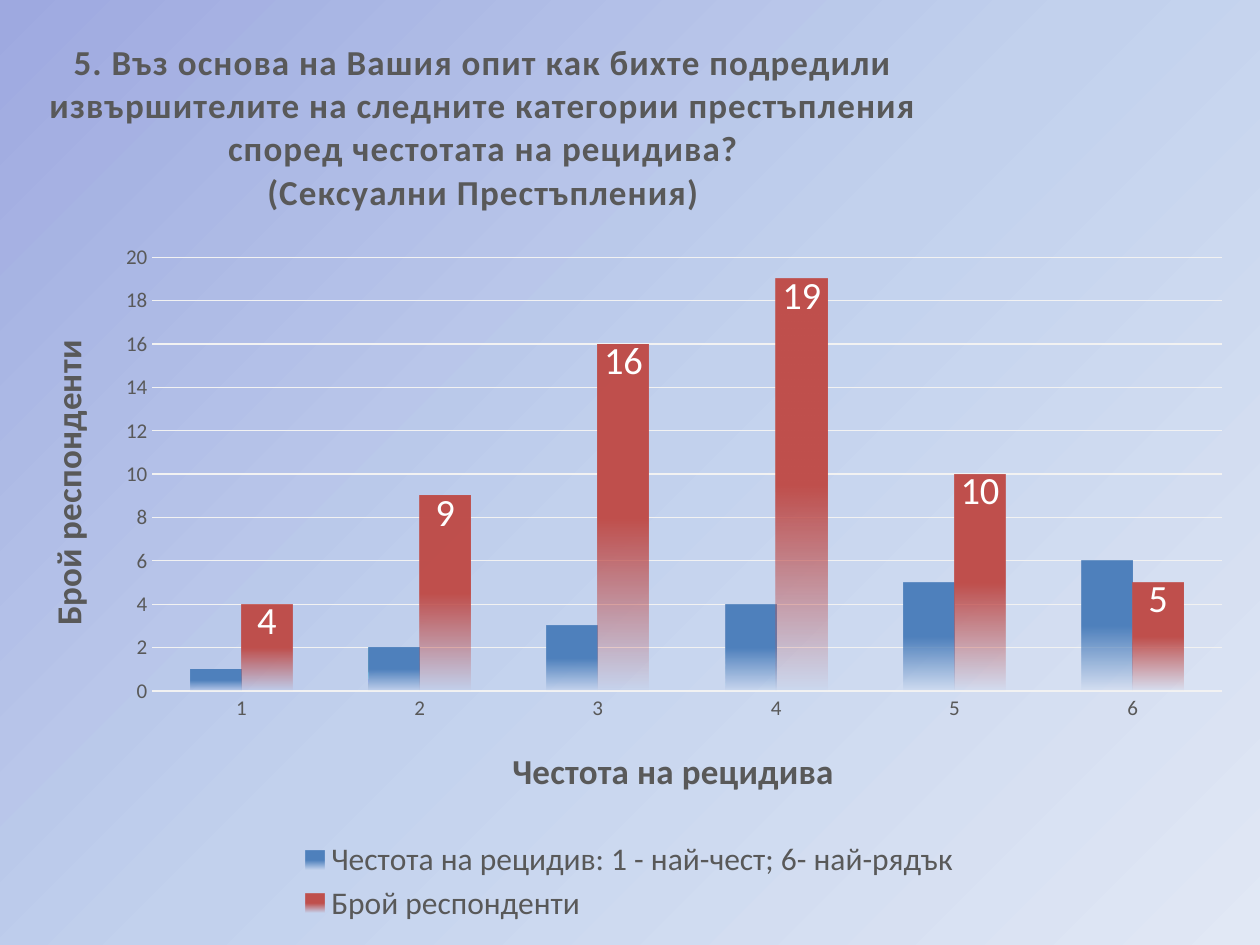
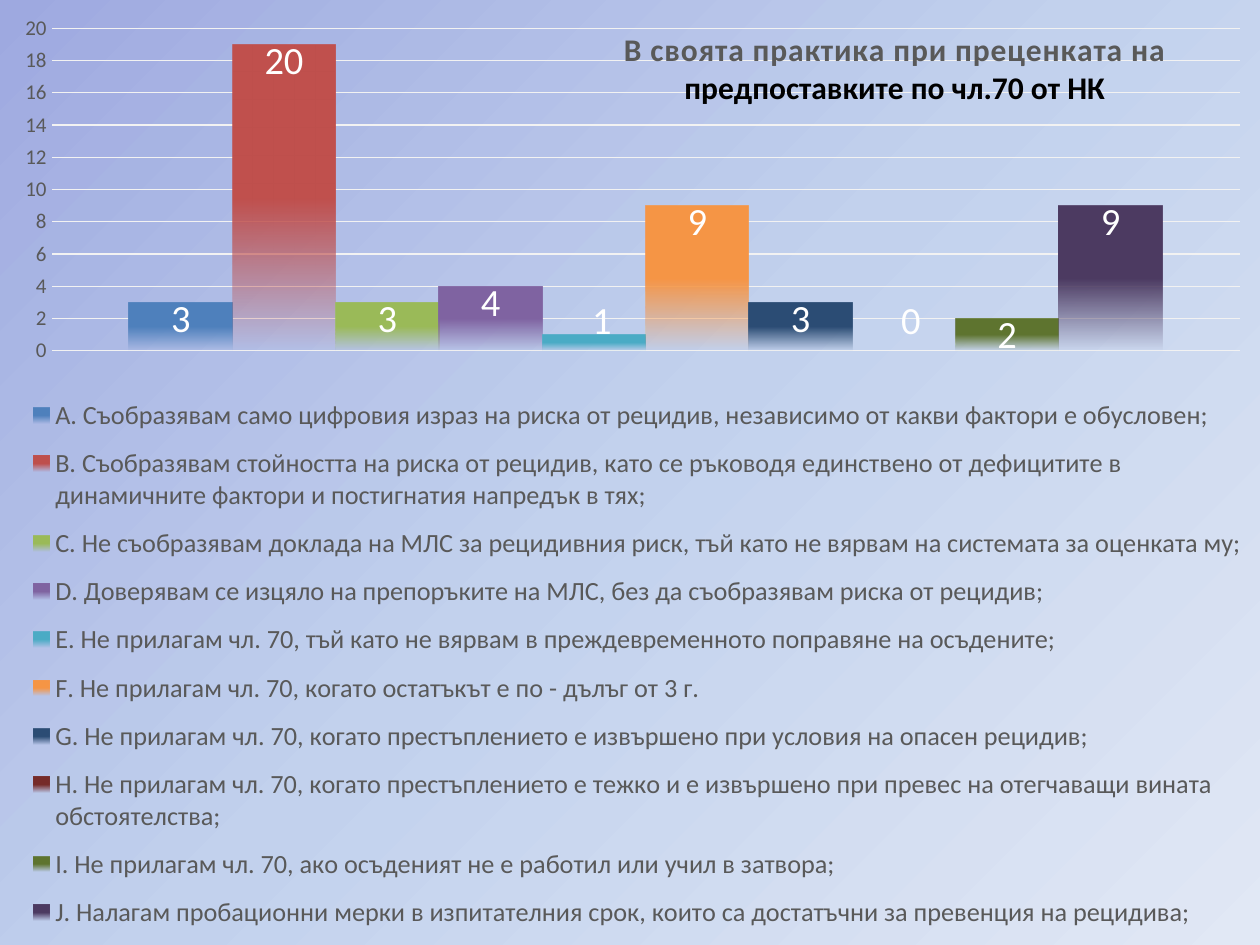
from lxml import etree
from pptx import Presentation
from pptx.chart.data import CategoryChartData
from pptx.dml.color import RGBColor
from pptx.enum import chart as kinds
from pptx.oxml.ns import nsdecls, qn
from pptx import util as u

COLORS = {
    "sky_dark": "9EA9E0", "sky": "C2D1ED", "sky_light": "E1E8F5",
    "grid": "F2F2F2", "grey": "595959", "white": "FFFFFF", "black": "000000",
    "blue": "4F81BD", "red": "C0504D", "green": "9BBB59", "purple": "8064A2",
    "aqua": "4BACC6", "orange": "F79646", "navy": "2C4D75", "maroon": "772C2A",
    "olive": "5F7530", "plum": "4D3B62",
}
FONT = "Calibri"
LABEL_SHIFT = (0, -0.23)

# Series: name, values, colour
RECIDIVISM = [
    ("Честота на рецидив: 1 - най-чест; 6- най-рядък", [1, 2, 3, 4, 5, 6], "blue"),
    ("Брой респонденти", [4, 9, 16, 19, 10, 5], "red"),
]
PRACTICE = [
    ("А. Съобразявам само цифровия израз на риска от рецидив, независимо от "
     "какви фактори е обусловен;", [3], "blue"),
    ("В. Съобразявам стойността на риска от рецидив, като се ръководя единствено "
     "от дефицитите в динамичните фактори и постигнатия напредък в тях;", [19], "red"),
    ("С. Не съобразявам доклада на МЛС за рецидивния риск, тъй като не вярвам "
     "на системата за оценката му;", [3], "green"),
    ("D. Доверявам се изцяло на препоръките на МЛС, без да съобразявам риска "
     "от рецидив;", [4], "purple"),
    ("Е. Не прилагам чл. 70, тъй като не вярвам в преждевременното поправяне "
     "на осъдените;", [1], "aqua"),
    ("F. Не прилагам чл. 70, когато остатъкът е по - дълъг от 3 г.", [9], "orange"),
    ("G. Не прилагам чл. 70, когато престъплението е извършено при условия "
     "на опасен рецидив;", [3], "navy"),
    ("H. Не прилагам чл. 70, когато престъплението е тежко и е извършено при "
     "превес на отегчаващи вината обстоятелства;", [0], "maroon"),
    ("I. Не прилагам чл. 70, ако осъденият не е работил или учил в затвора;",
     [2], "olive"),
    ("J. Налагам пробационни мерки в изпитателния срок, които са достатъчни "
     "за превенция на рецидива;", [9], "plum"),
]


def apply(target, values):
    for name, value in values.items():
        setattr(target, name, value)


def set_font(font, size, color="grey", bold=False):
    apply(font, {"name": FONT, "size": u.Pt(size), "bold": bold})
    font.color.rgb = RGBColor.from_string(COLORS[color])


def set_gradient(properties, stops, angle):
    """Swap the solid fill for a gradient; stops are (percent, colour, alpha)."""
    gradient = etree.fromstring(
        f'<a:gradFill {nsdecls("a")} rotWithShape="1"><a:gsLst/>'
        f'<a:lin ang="{angle * 60000}" scaled="0"/></a:gradFill>')
    for percent, color, alpha in stops:
        stop = etree.SubElement(gradient[0], qn("a:gs"), pos=str(percent * 1000))
        value = etree.SubElement(stop, qn("a:srgbClr"), val=COLORS[color])
        if alpha < 100:
            etree.SubElement(value, qn("a:alpha"), val=str(alpha * 1000))
    properties.replace(properties.find(qn("a:solidFill")), gradient)


def set_layout(element, box, place, inner=False, shift=False):
    """Place a chart part at (x, y[, w, h]) cm in the chart, or shift it by (x, y)."""
    for old in element.findall(qn("c:layout")):
        element.remove(old)
    layout = etree.Element(qn("c:layout"))
    manual = etree.SubElement(layout, qn("c:manualLayout"))
    entries = [("layoutTarget", "inner")] if inner else []
    if not shift:
        entries += [("xMode", "edge"), ("yMode", "edge")]
    sizes = (box[2], box[3]) * 2
    entries += [(tag, length / size) for tag, length, size in zip("xywh", place, sizes)]
    for tag, value in entries:
        etree.SubElement(manual, qn(f"c:{tag}"), val=str(value))
    # A label keeps its layout before its text, other parts after it
    first = (qn("c:idx"),) if shift else (qn("c:tx"), qn("c:legendPos"))
    element.insert(sum(child.tag in first for child in element), layout)


def write_title(title, lines, size, box, place):
    """Lines are (text, colour, letter spacing in hundredths of a point)."""
    frame = title.text_frame
    for number, (line, color, spacing) in enumerate(lines):
        paragraph = frame.add_paragraph() if number else frame.paragraphs[0]
        run = paragraph.add_run()
        run.text = line
        set_font(run.font, size, color, bold=True)
        run._r.get_or_add_rPr().set("spc", str(spacing))
    set_layout(title._element, box, place)


def add_background(slide):
    slide.background.fill.solid()
    stops = [(0, "sky_dark", 100), (50, "sky", 100), (100, "sky_light", 100)]
    set_gradient(slide.element.find(".//" + qn("p:bgPr")), stops, 45)


def style_axes(chart):
    for axis in (chart.category_axis, chart.value_axis):
        apply(axis, {"major_tick_mark": kinds.XL_TICK_MARK.NONE,
                     "minor_tick_mark": kinds.XL_TICK_MARK.NONE})
        axis.format.line.fill.background()
        set_font(axis.tick_labels.font, 12)
    apply(chart.value_axis, {"minimum_scale": 0, "maximum_scale": 20,
                             "major_unit": 2, "has_major_gridlines": True})
    line = chart.value_axis.major_gridlines.format.line
    line.width = u.Pt(0.75)
    line.color.rgb = RGBColor.from_string(COLORS["grid"])


def add_labels(series, box, shift=LABEL_SHIFT, wording=None):
    """Label each column inside its top, moved by shift; wording replaces the value."""
    apply(series.data_labels, {"show_value": True,
                               "position": kinds.XL_LABEL_POSITION.INSIDE_END})
    set_font(series.data_labels.font, 22, "white")
    for index in range(len(series.values)):
        label = series.points[index].data_label
        if wording:
            run = label.text_frame.paragraphs[0].add_run()
            run.text = wording
            set_font(run.font, 22, "white")
        else:
            set_font(label.font, 22, "white")
        label.position = kinds.XL_LABEL_POSITION.INSIDE_END
    for element in series._element.iter(qn("c:dLbl")):
        set_layout(element, box, shift, shift=True)


def add_column_chart(slide, box, categories, rows, plot_place, legend_place, legend_size):
    data = CategoryChartData()
    data.categories = categories
    for name, values, _ in rows:
        data.add_series(name, values)
    chart = slide.shapes.add_chart(
        kinds.XL_CHART_TYPE.COLUMN_CLUSTERED, *map(u.Cm, box), data).chart
    set_font(chart.font, 10, "black")
    style_axes(chart)

    # Columns fade out towards the baseline
    plot = chart.plots[0]
    apply(plot, {"gap_width": 150, "overlap": 0, "vary_by_categories": False})
    for series, (_, _, color) in zip(plot.series, rows):
        series.invert_if_negative = False
        series.format.fill.solid()
        set_gradient(series._element.find(qn("c:spPr")),
                     [(50, color, 100), (100, color, 0)], 90)

    # Legend and plot area
    chart.has_legend = True
    apply(chart.legend, {"position": kinds.XL_LEGEND_POSITION.BOTTOM,
                         "include_in_layout": False})
    set_font(chart.legend.font, legend_size)
    set_layout(chart.legend._element, box, legend_place)
    plot_area = chart._chartSpace.find(".//" + qn("c:plotArea"))
    set_layout(plot_area, box, plot_place, inner=True)
    return chart


def build_recidivism_slide(slide, box):
    add_background(slide)
    chart = add_column_chart(slide, box, list("123456"), RECIDIVISM,
                             (2.77, 4.86, 21.56, 8.74), (5.44, 16.52, 13.9, 1.84), 18)
    write_title(chart.chart_title, [
        ("5. Въз основа на Вашия опит как бихте подредили извършителите на следните "
         "категории престъпления според честотата на рецидива?", "grey", 50),
        ("(Сексуални Престъпления)", "grey", 50)], 20, box, (0.62, 0.37))
    write_title(chart.category_axis.axis_title,
                [("Честота на рецидива", "grey", 0)], 20, box, (9.9, 14.58))
    write_title(chart.value_axis.axis_title,
                [("Брой респонденти", "grey", 0)], 20, box, (0.44, 6.4))
    add_labels(chart.plots[0].series[1], box)


def build_practice_slide(slide, box):
    add_background(slide)
    chart = add_column_chart(slide, box, ["1"], PRACTICE,
                             (1.04, 0.57, 23.95, 6.5), (0.41, 7.72, 24.9, 11.33), 15)
    chart.category_axis.tick_label_position = kinds.XL_TICK_LABEL_POSITION.NONE
    write_title(chart.chart_title, [
        ("В своята практика при преценката на", "grey", 50),
        ("предпоставките по чл.70 от НК", "black", 0)], 18, box, (12.5, 0.51))

    # Labels of the lowest columns are lifted; the highest has its own wording
    shifts = {0: (0.14, -1.17), 1: (0.16, -0.85)}
    for series in chart.plots[0].series:
        value = series.values[0]
        add_labels(series, box, shifts.get(value, LABEL_SHIFT),
                   "20" if value == 19 else None)


def main():
    presentation = Presentation()
    apply(presentation, {"slide_width": u.Cm(25.4), "slide_height": u.Cm(19.05)})
    blank = presentation.slide_layouts[6]
    build_recidivism_slide(presentation.slides.add_slide(blank), (0.3, 0.33, 24.8, 18.4))
    build_practice_slide(presentation.slides.add_slide(blank), (0, 0, 25.4, 19.05))
    presentation.save("out.pptx")


if __name__ == "__main__":
    main()
